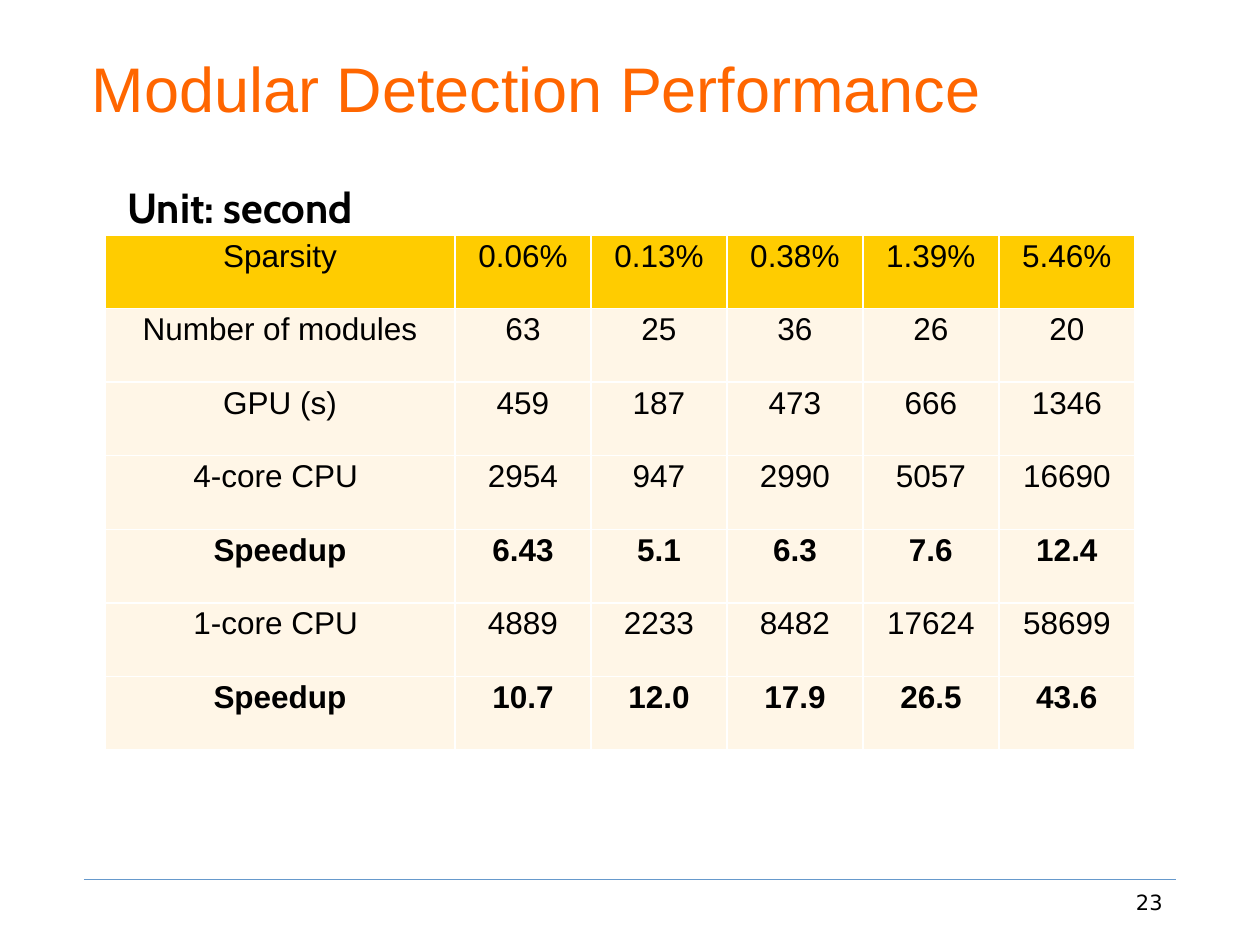
from pptx import Presentation
from pptx import util as u
from pptx.dml.color import RGBColor
from pptx.enum import shapes, text
from pptx.oxml import parse_xml
from pptx.oxml.ns import nsdecls

# Content
TITLE = "Modular Detection Performance"
UNIT = "Unit: second"
PAGE = "23"
ROWS = [
    ("Sparsity", "0.06%", "0.13%", "0.38%", "1.39%", "5.46%"),
    ("Number of modules", "63", "25", "36", "26", "20"),
    ("GPU (s)", "459", "187", "473", "666", "1346"),
    ("4-core CPU ", "2954", "947", "2990", "5057", "16690"),
    ("Speedup", "6.43", "5.1", "6.3", "7.6", "12.4"),
    ("1-core CPU ", "4889", "2233", "8482", "17624", "58699"),
    ("Speedup", "10.7", "12.0", "17.9", "26.5", "43.6"),
]

# Theme: colours and type
THEME = {
    "paper": "FFFFFF", "head": "FFCC00", "body": "FFF6E7", "rule": "6699CC",
    "title": {"name": "Arial", "size": 36, "color": "FF6600", "bold": False},
    "cell": {"name": "Arial", "size": 18, "color": "000000", "bold": False},
    "unit": {"name": "Cabin", "size": 24, "color": "000000", "bold": True},
    "page": {"name": "DejaVu Sans", "size": 12, "color": "000000", "bold": False},
}

# Layout in px, 126 to the inch
SCALE = 914400 / 126
TITLE_BOX = (79, 37, 1102, 94)
UNIT_BOX = (115, 175, 321, 63)
PAGE_BOX = (1096, 883, 79, 66)
GRID = (105, 235, 1030, 515)
FIRST = 350
RULE = (84, 879, 1176, 879)


def px(n):
    return u.Emu(round(n * SCALE))


def rgb(name):
    return RGBColor.from_string(name)


def write(frame, words, style, align=text.PP_ALIGN.LEFT, **extra):
    frame.text = words
    para = frame.paragraphs[0]
    para.alignment = align
    font = para.runs[0].font
    form = {**style, **extra}
    font.color.rgb = rgb(form.pop("color"))
    form["size"] = u.Pt(form["size"])
    for key, val in form.items():
        setattr(font, key, val)
    return para


def label(box, words, style, align=text.PP_ALIGN.LEFT):
    frame = slide.shapes.add_textbox(*map(px, box)).text_frame
    frame.word_wrap = True
    write(frame, words, style, align)


def edge(cell):
    props = cell._tc.get_or_add_tcPr()
    for i, side in enumerate(("lnL", "lnR", "lnT", "lnB")):
        props.insert(i, parse_xml(
            f'<a:{side} {nsdecls("a")} w="12700"><a:solidFill>'
            f'<a:srgbClr val="{THEME["paper"]}"/></a:solidFill></a:{side}>'))


deck = Presentation()
deck.slide_width, deck.slide_height = px(1260), px(945)
slide = deck.slides.add_slide(deck.slide_layouts[5])
fill = slide.background.fill
fill.solid()
fill.fore_color.rgb = rgb(THEME["paper"])

# Footer rule
rule = slide.shapes.add_connector(shapes.MSO_CONNECTOR.STRAIGHT, *map(px, RULE))
rule.line.color.rgb = rgb(THEME["rule"])
rule.line.width = u.Pt(0.25)
rule._element.spPr.append(parse_xml(f'<a:effectLst {nsdecls("a")}/>'))

# Title
title = slide.shapes.title
for key, val in zip(("left", "top", "width", "height"), TITLE_BOX):
    setattr(title, key, px(val))
frame = title.text_frame
frame.auto_size = text.MSO_AUTO_SIZE.NONE
frame.vertical_anchor = text.MSO_ANCHOR.BOTTOM
write(frame, TITLE, THEME["title"])

# Timing table
count = len(ROWS[0])
table = slide.shapes.add_table(len(ROWS), count, *map(px, GRID)).table
rest = (GRID[2] - FIRST) / (count - 1)
for i, col in enumerate(table.columns):
    col.width = px(rest if i else FIRST)
for r, row in enumerate(ROWS):
    table.rows[r].height = px(GRID[3] / len(ROWS))
    for c, words in enumerate(row):
        cell = table.cell(r, c)
        cell.margin_left = cell.margin_right = px(9)
        cell.margin_top = cell.margin_bottom = 0
        cell.fill.solid()
        cell.fill.fore_color.rgb = rgb(THEME["body" if r else "head"])
        edge(cell)
        para = write(cell.text_frame, words, THEME["cell"],
                     text.PP_ALIGN.CENTER, bold=row[0] == "Speedup")
        para.line_spacing = 1.1

# Page number and unit note
label(PAGE_BOX, PAGE, THEME["page"], text.PP_ALIGN.RIGHT)
label(UNIT_BOX, UNIT, THEME["unit"])

deck.save("out.pptx")
